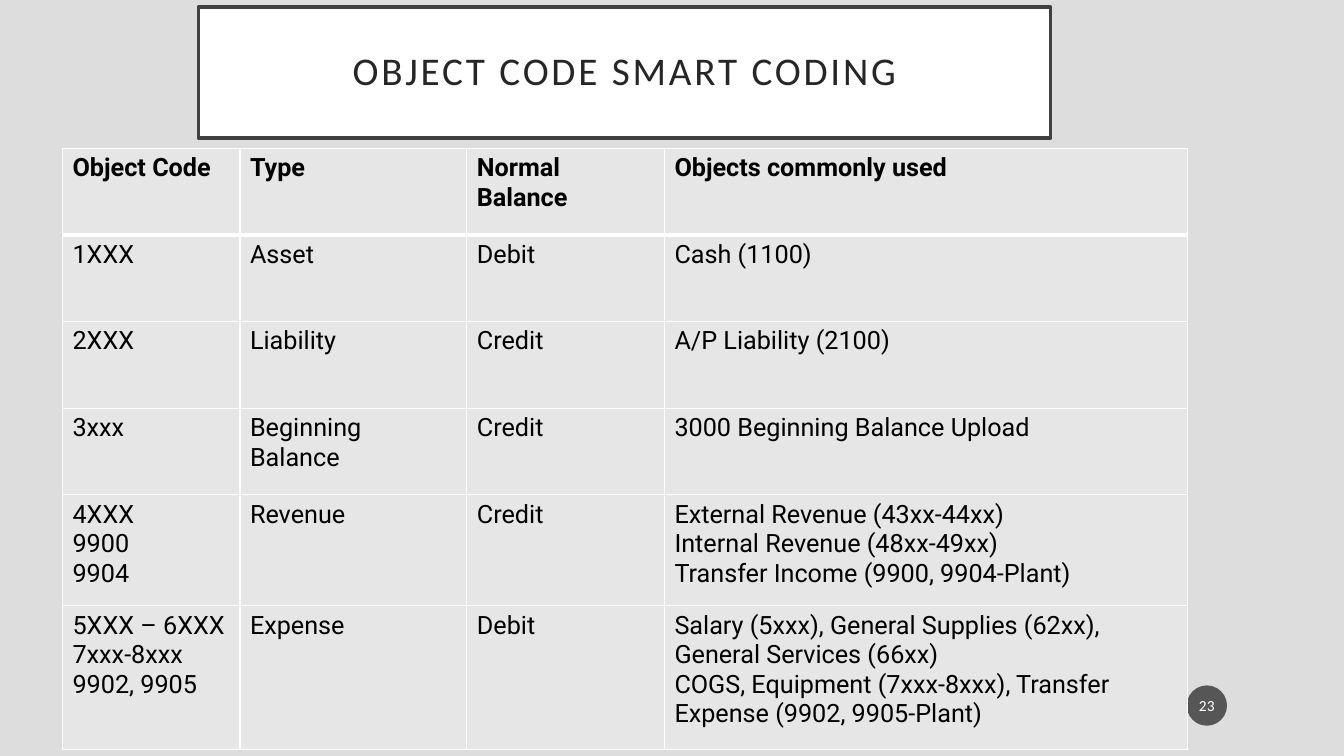
from lxml import etree
from pptx import Presentation
from pptx.dml.color import RGBColor
from pptx.enum.shapes import MSO_SHAPE
from pptx.enum.text import MSO_ANCHOR, PP_ALIGN
from pptx.oxml.ns import qn
from pptx.util import Inches, Pt

CENTER, LEFT = PP_ALIGN.CENTER, PP_ALIGN.LEFT
MIDDLE = MSO_ANCHOR.MIDDLE
OVAL = MSO_SHAPE.OVAL
COLORS = {
    "background": "DDDDDD",
    "white": "FFFFFF",
    "frame": "404040",
    "title": "262626",
    "badge": "1D1D1D",
    "cell": "E6E6E6",
    "text": "000000",
}


def color(name):
    return RGBColor.from_string(COLORS[name])


def write(text_frame, text, size=18, font="Roboto", ink="text", bold=False,
          align=LEFT, spacing=None, tracking=None):
    """Write one paragraph per line of text, all in the same format."""
    for index, line in enumerate(text.split("\n")):
        para = text_frame.paragraphs[0] if index == 0 else text_frame.add_paragraph()
        para.alignment = align
        if spacing:
            para.line_spacing = spacing
        span = para.add_run()
        span.text = line
        span.font.size = Pt(size)
        span.font.name = font
        span.font.bold = bold
        span.font.color.rgb = color(ink)
        if tracking:
            span.font._element.set("spc", str(tracking * 100))


deck = Presentation()
deck.slide_width, deck.slide_height = Inches(13.33), Inches(7.5)
page = deck.slides.add_slide(deck.slide_layouts[5])
page.background.fill.solid()
page.background.fill.fore_color.rgb = color("background")

# Framed title
title = page.shapes.title
title.left, title.top = Inches(1.97), Inches(0.07)
title.width, title.height = Inches(8.45), Inches(1.3)
title.fill.solid()
title.fill.fore_color.rgb = color("white")
title.line.color.rgb = color("frame")
title.line.width = Pt(2.5)
frame = title.text_frame
frame.word_wrap = True
frame.vertical_anchor = MIDDLE
frame.margin_left = frame.margin_right = Inches(0.2)
frame.margin_top = frame.margin_bottom = Inches(0.2)
write(frame, "OBJECT CODE SMART CODING", size=28, font="Calibri", ink="title",
      align=CENTER, spacing=0.9, tracking=2)

# Page number badge
badge = page.shapes.add_shape(OVAL, Inches(11.77), Inches(6.8), Inches(0.4), Inches(0.4))
badge.shadow.inherit = False
badge.fill.solid()
badge.fill.fore_color.rgb = color("badge")
badge_color = badge._element.spPr.find(qn("a:solidFill"))[0]
etree.SubElement(badge_color, qn("a:alpha")).set("val", "70000")
badge.line.fill.background()
frame = badge.text_frame
frame.vertical_anchor = MIDDLE
frame.margin_left = frame.margin_right = Inches(0.02)
write(frame, "23", size=11, font="Calibri", ink="white", align=CENTER)

# Object code table
rows = [
    ("Object Code", "Type", "Normal\nBalance", "Objects commonly used"),
    ("1XXX", "Asset", "Debit", "Cash (1100)"),
    ("2XXX", "Liability", "Credit", "A/P Liability (2100)"),
    ("3xxx", "Beginning Balance", "Credit", "3000 Beginning Balance Upload"),
    ("4XXX\n9900\n9904", "Revenue", "Credit",
     "External Revenue (43xx-44xx)\nInternal Revenue (48xx-49xx)\n"
     "Transfer Income (9900, 9904-Plant)"),
    ("5XXX – 6XXX\n7xxx-8xxx\n9902, 9905", "Expense", "Debit",
     "Salary (5xxx), General Supplies (62xx), General Services (66xx)\n"
     "COGS, Equipment (7xxx-8xxx), Transfer Expense (9902, 9905-Plant)"),
]
column_widths = [1.76, 2.25, 1.96, 5.19]
row_heights = [0.86, 0.86, 0.86, 0.86, 1.1, 1.43]
table = page.shapes.add_table(len(rows), len(column_widths), Inches(0.62), Inches(1.47),
                              Inches(sum(column_widths)), Inches(sum(row_heights))).table
for column, width in zip(table.columns, column_widths):
    column.width = Inches(width)
for row, height in zip(table.rows, row_heights):
    row.height = Inches(height)

for row_index, texts in enumerate(rows):
    for column_index, text in enumerate(texts):
        cell = table.cell(row_index, column_index)
        write(cell.text_frame, text, bold=row_index == 0)

        # White borders, thicker below the header; they precede the fill in the XML
        borders = {"a:lnL": 1, "a:lnR": 1,
                   "a:lnT": 3 if row_index == 1 else 1,
                   "a:lnB": 3 if row_index == 0 else 1}
        properties = cell._tc.get_or_add_tcPr()
        for side, weight in borders.items():
            border = etree.SubElement(properties, qn(side), w=str(Pt(weight)))
            border_fill = etree.SubElement(border, qn("a:solidFill"))
            etree.SubElement(border_fill, qn("a:srgbClr"), val=COLORS["white"])
        cell.fill.solid()
        cell.fill.fore_color.rgb = color("cell")

deck.save("out.pptx")
